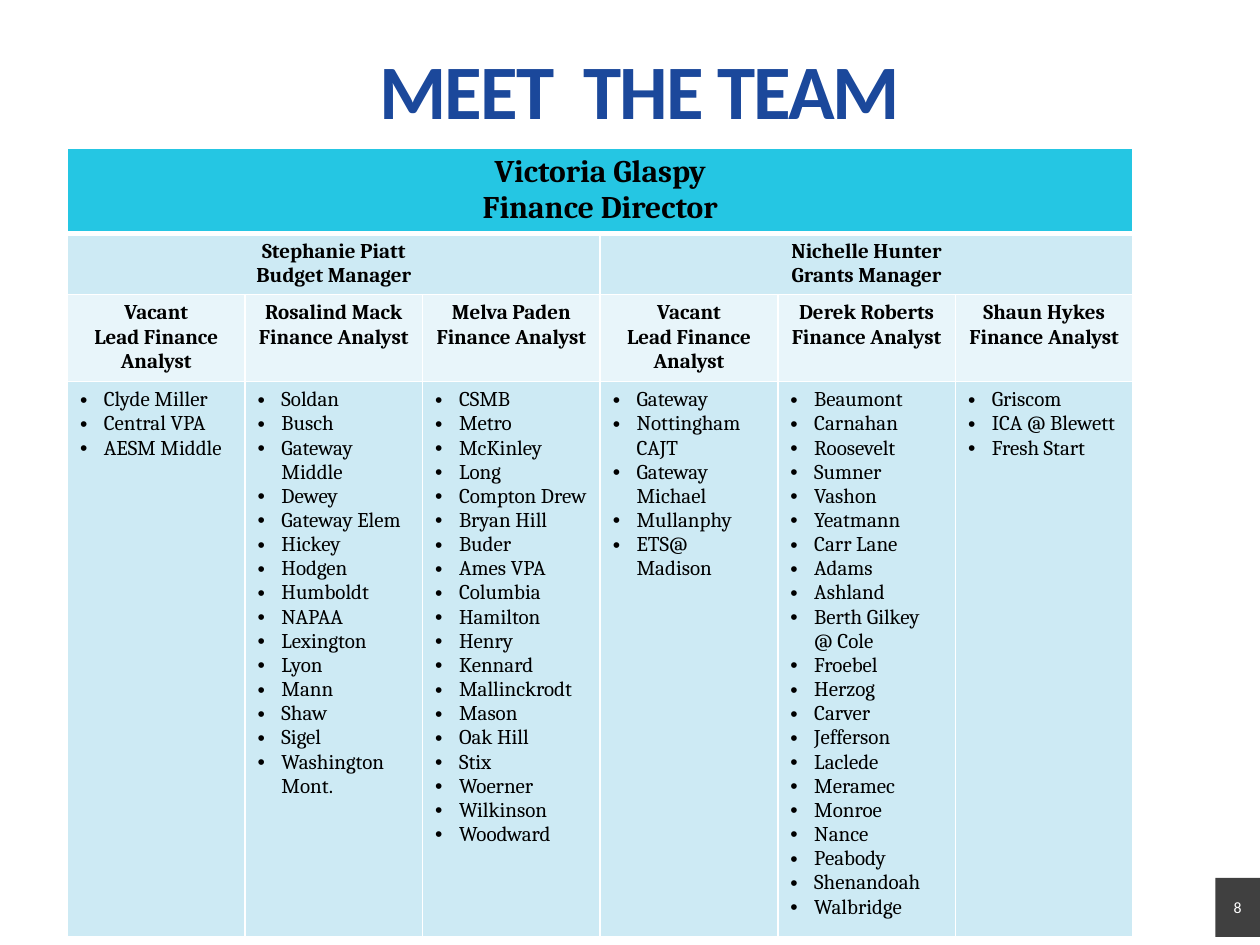
from dataclasses import dataclass

from lxml.etree import SubElement
from pptx import Presentation
from pptx.dml.color import RGBColor
from pptx.enum.shapes import MSO_SHAPE as Shape
from pptx.enum.text import MSO_ANCHOR as Anchor, MSO_AUTO_SIZE as AutoSize, PP_ALIGN as Align
from pptx.oxml.ns import qn
from pptx.util import Cm, Pt


@dataclass(frozen=True)
class Theme:
    heading: str = "Calibri"
    body: str = "Cambria"
    blue: str = "1B489B"
    cyan: str = "25C6E3"
    pale: str = "CDEAF4"
    paler: str = "E8F5FA"
    dark: str = "404040"
    white: str = "FFFFFF"
    black: str = "000000"
    title_size: float = 44
    director_size: float = 18
    cell_size: float = 12
    number_size: float = 9


@dataclass(frozen=True)
class Person:
    name: str
    role: str


@dataclass(frozen=True)
class Analyst(Person):
    schools: tuple[str, ...]


@dataclass(frozen=True)
class Manager(Person):
    analysts: tuple[Analyst, ...]


THEME = Theme()
DIRECTOR = Person("Victoria Glaspy", "Finance Director")
MANAGERS = (
    Manager("Stephanie Piatt", "Budget Manager", (
        Analyst("Vacant", "Lead Finance Analyst", ("Clyde Miller", "Central VPA", "AESM Middle")),
        Analyst("Rosalind Mack", "Finance Analyst", (
            "Soldan", "Busch", "Gateway Middle", "Dewey", "Gateway Elem", "Hickey", "Hodgen",
            "Humboldt", "NAPAA", "Lexington", "Lyon", "Mann", "Shaw", "Sigel", "Washington Mont.")),
        Analyst("Melva Paden", "Finance Analyst", (
            "CSMB", "Metro", "McKinley", "Long", "Compton Drew", "Bryan Hill", "Buder",
            "Ames VPA", "Columbia", "Hamilton", "Henry", "Kennard", "Mallinckrodt", "Mason",
            "Oak Hill", "Stix", "Woerner", "Wilkinson", "Woodward")),
    )),
    Manager("Nichelle Hunter", "Grants Manager", (
        Analyst("Vacant", "Lead Finance Analyst", (
            "Gateway", "Nottingham CAJT", "Gateway Michael", "Mullanphy", "ETS@ Madison")),
        Analyst("Derek Roberts", "Finance Analyst", (
            "Beaumont", "Carnahan", "Roosevelt", "Sumner", "Vashon", "Yeatmann", "Carr Lane",
            "Adams", "Ashland", "Berth Gilkey @ Cole", "Froebel", "Herzog", "Carver",
            "Jefferson", "Laclede", "Meramec", "Monroe", "Nance", "Peabody", "Shenandoah",
            "Walbridge")),
        Analyst("Shaun Hykes", "Finance Analyst", ("Griscom", "ICA @ Blewett", "Fresh Start")),
    )),
)
ROW_HEIGHTS = (1.37, 1.24, 1.75, 11.2)
ROW_FILLS = (THEME.cyan, THEME.pale, THEME.paler, THEME.pale)
COLUMN_WIDTH = 3.58


def style_text(tf, font: str, size: float, color: str, bold: bool, align: Align) -> None:
    for p in tf.paragraphs:
        p.alignment = align
        for r in p.runs:
            r.font.name = font
            r.font.size = Pt(size)
            r.font.bold = bold
            r.font.color.rgb = RGBColor.from_string(color)


def set_margins(tf, x: float, y: float) -> None:
    tf.margin_left = tf.margin_right = Cm(x)
    tf.margin_top = tf.margin_bottom = Cm(y)


def add_title(s, text: str) -> None:
    sp = s.shapes.title
    sp.left, sp.top, sp.width, sp.height = Cm(0.2), Cm(0.97), Cm(25.4), Cm(1.24)
    tf = sp.text_frame
    tf.text = text
    tf.word_wrap = True
    tf.auto_size = AutoSize.NONE
    tf.vertical_anchor = Anchor.TOP
    set_margins(tf, 0.18, 0.1)
    style_text(tf, THEME.heading, THEME.title_size, THEME.blue, True, Align.CENTER)
    p = tf.paragraphs[0]
    p.line_spacing = 0.9
    p.runs[0].font._element.set("spc", "-110")


def add_page_number(s, number: int) -> None:
    sp = s.shapes.add_shape(Shape.RECTANGLE, Cm(24.5), Cm(17.7), Cm(0.9), Cm(1.19))
    sp.shadow.inherit = False
    sp.fill.solid()
    sp.fill.fore_color.rgb = RGBColor.from_string(THEME.dark)
    sp.line.fill.background()
    tf = sp.text_frame
    tf.text = str(number)
    tf.vertical_anchor = Anchor.MIDDLE
    set_margins(tf, 0, 0)
    style_text(tf, THEME.heading, THEME.number_size, THEME.white, False, Align.CENTER)


def format_cell(cell, fill: str, top: float, bottom: float) -> None:
    tc_pr = cell._tc.get_or_add_tcPr()
    for side, width in (("L", 1), ("R", 1), ("T", top), ("B", bottom)):
        ln = SubElement(tc_pr, qn(f"a:ln{side}"), w=str(Pt(width)))
        SubElement(SubElement(ln, qn("a:solidFill")), qn("a:srgbClr"), val=THEME.white)
    cell.fill.solid()
    cell.fill.fore_color.rgb = RGBColor.from_string(fill)


def write_person(cell, person: Person, size: float = THEME.cell_size) -> None:
    tf = cell.text_frame
    tf.text = f"{person.name}\n{person.role}"
    style_text(tf, THEME.body, size, THEME.black, True, Align.CENTER)


def write_schools(cell, schools: tuple[str, ...]) -> None:
    tf = cell.text_frame
    tf.text = "\n".join(schools)
    for p in tf.paragraphs:
        p_pr = p._p.get_or_add_pPr()
        p_pr.set("marL", str(Cm(0.48)))
        p_pr.set("indent", str(Cm(-0.48)))
        SubElement(p_pr, qn("a:buFont"), typeface="Arial")
        SubElement(p_pr, qn("a:buChar"), char="•")
    style_text(tf, THEME.body, THEME.cell_size, THEME.black, False, Align.LEFT)


def add_team_table(s) -> None:
    analysts = [a for m in MANAGERS for a in m.analysts]
    count = len(analysts)
    tbl = s.shapes.add_table(len(ROW_HEIGHTS), count, Cm(1.36), Cm(2.98),
                             Cm(COLUMN_WIDTH * count), Cm(sum(ROW_HEIGHTS))).table
    for col in tbl.columns:
        col.width = Cm(COLUMN_WIDTH)
    for i, (height, fill) in enumerate(zip(ROW_HEIGHTS, ROW_FILLS)):
        tbl.rows[i].height = Cm(height)
        for cell in tbl.rows[i].cells:
            format_cell(cell, fill, top=3 if i == 1 else 1, bottom=3 if i == 0 else 1)

    tbl.cell(0, 0).merge(tbl.cell(0, count - 1))
    write_person(tbl.cell(0, 0), DIRECTOR, THEME.director_size)
    start = 0
    for manager in MANAGERS:
        end = start + len(manager.analysts)
        tbl.cell(1, start).merge(tbl.cell(1, end - 1))
        write_person(tbl.cell(1, start), manager)
        start = end
    for i, analyst in enumerate(analysts):
        write_person(tbl.cell(2, i), analyst)
        write_schools(tbl.cell(3, i), analyst.schools)


def main() -> None:
    prs = Presentation()
    prs.slide_width, prs.slide_height = Cm(25.4), Cm(19.05)
    s = prs.slides.add_slide(prs.slide_layouts[5])
    add_title(s, "MEET  THE TEAM")
    add_page_number(s, 8)
    add_team_table(s)
    prs.save("out.pptx")


if __name__ == "__main__":
    main()
